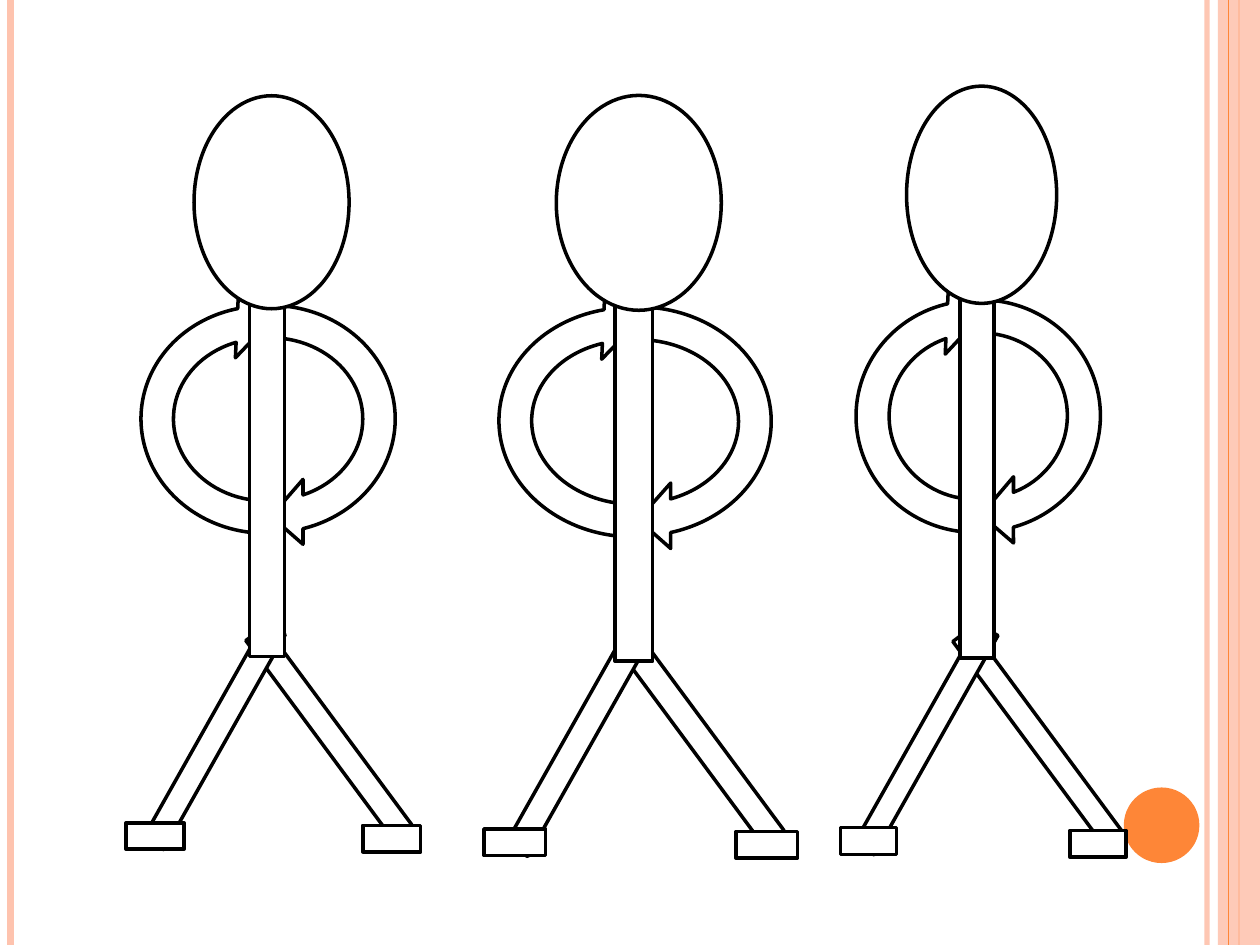
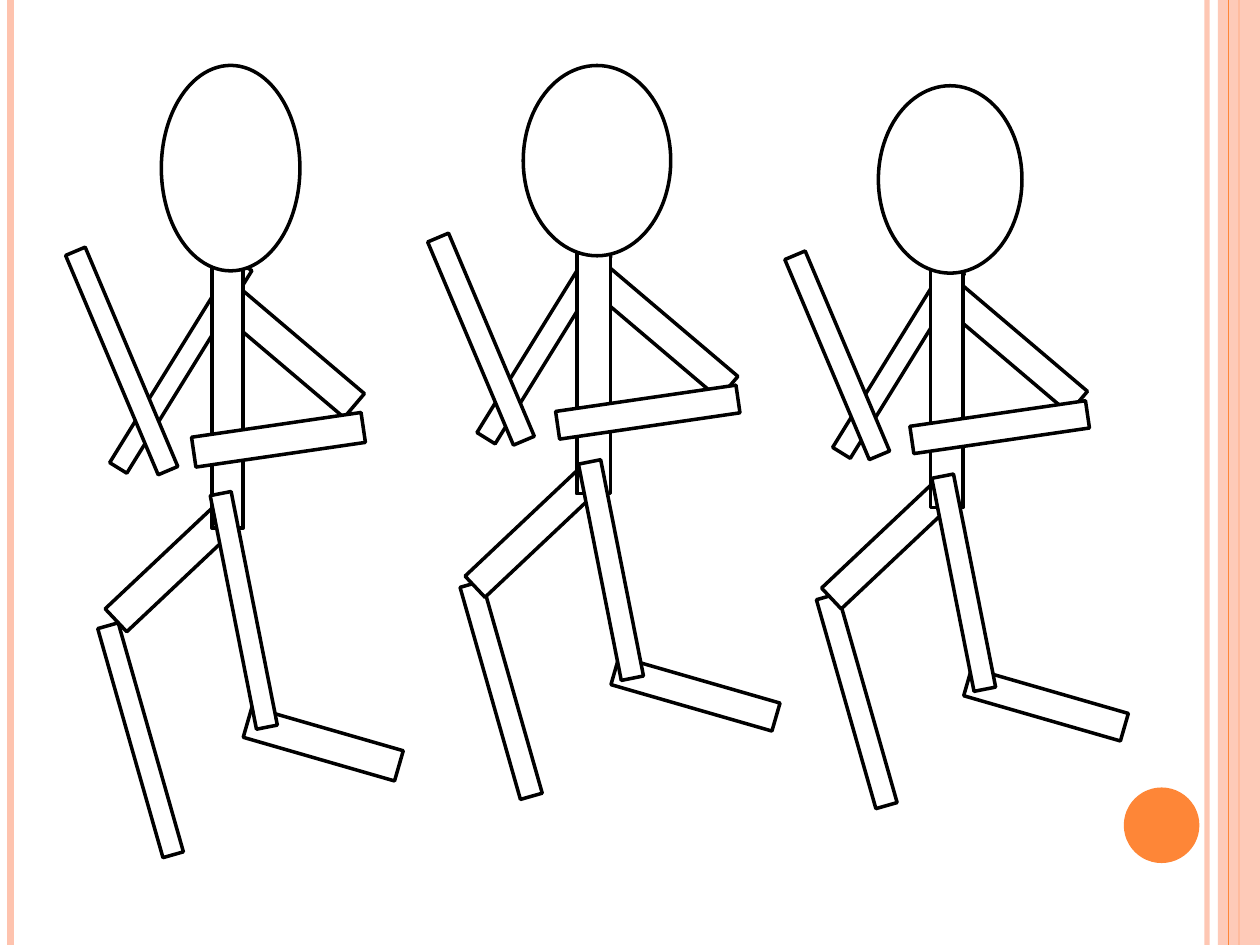
from lxml import etree
from pptx import Presentation
from pptx.dml.color import RGBColor
from pptx.enum import shapes as kinds
from pptx.oxml import ns
from pptx.util import Pt

WIDE, HIGH = 720, 540
INK, PAPER, PEACH, FLAME = "000000", "FFFFFF", "FEC3AE", "FE8637"
RECT = kinds.MSO_SHAPE.RECTANGLE
OVAL = kinds.MSO_SHAPE.OVAL
ARC = kinds.MSO_SHAPE.CIRCULAR_ARROW

# Parts of the first figure, back to front: kind, centre x, centre y, width, height, turn
STANDING = [
    (ARC, 151.2, 239.8, 148.3, 159.8, 272.7),   # arms
    (ARC, 154.8, 239.4, 148.3, 160.6, 90),
    (RECT, 187.9, 418.7, 141.1, 13.7, 53.5),    # legs
    (RECT, 122.4, 420.8, 141.1, 13.7, 119.4),
    (RECT, 152.6, 272.2, 20.2, 205.9, 0),       # trunk
    (OVAL, 155.2, 115.6, 88.6, 121.7, 0),       # head
    (RECT, 88.6, 477.7, 33.1, 15.1, 0),         # feet
    (RECT, 223.9, 479.2, 33.1, 15.1, 0),
]
RUNNING = [
    (RECT, 168.1, 202.7, 90, 18, 40.3),         # upper arms
    (RECT, 103.3, 209.5, 136.1, 11.5, 121.7),
    (RECT, 80.3, 423, 136.1, 12.2, 74.1),       # front shin and thigh
    (RECT, 99, 323.6, 90, 18, 136.7),
    (RECT, 130, 225, 18, 153.4, 0),             # trunk
    (OVAL, 131.8, 96.1, 79.2, 117.4, 0),        # head
    (RECT, 184.7, 425.2, 90, 18, 16.1),         # back shin and thigh
    (RECT, 139.3, 348.8, 136.1, 12.2, 78.8),
    (RECT, 69.5, 206.3, 136.1, 12.2, 67.1),     # forearms
    (RECT, 159.1, 251.3, 97.9, 17.3, 171.7),
]

# Each figure in a row: x scale, y scale, x shift, y shift
STAND_ROW = [(1, 1, 0, 0), (1.064, 1.009, 199.9, -0.7), (0.968, 1.02, 410.7, -6.6)]
RUN_ROW = [(1, 1, 0, 0), (1.064, 0.926, 200.9, 2.8), (1.036, 0.912, 406.4, 14.9)]


def tint(code):
    return RGBColor.from_string(code)


def fade(part, percent):
    """Make the solid colour inside part partly transparent."""
    color = part.find(".//" + ns.qn("a:srgbClr"))
    etree.SubElement(color, ns.qn("a:alpha")).set("val", str(percent * 1000))


class Deck:
    def __init__(self):
        self.file = Presentation()
        self.file.slide_width, self.file.slide_height = Pt(WIDE), Pt(HIGH)
        self.slide = None

    def page(self):
        self.slide = self.file.slides.add_slide(self.file.slide_layouts[6])
        self.frame()

    def rule(self, x, color, width, alpha=100):
        line = self.slide.shapes.add_connector(
            kinds.MSO_CONNECTOR.STRAIGHT, Pt(x), 0, Pt(x), Pt(HIGH))
        line.line.color.rgb = tint(color)
        line.line.width = Pt(width)
        props = line._element.spPr
        etree.SubElement(props, ns.qn("a:effectLst"))
        if alpha < 100:
            fade(props, alpha)

    def shape(self, home, kind, left, top, wide, high, fill, edge=None):
        item = home.add_shape(kind, Pt(left), Pt(top), Pt(wide), Pt(high))
        item.shadow.inherit = False
        item.fill.solid()
        item.fill.fore_color.rgb = tint(fill)
        if edge:
            item.line.color.rgb = tint(edge)
            item.line.width = Pt(2)
        else:
            item.line.fill.background()
        return item

    def frame(self):
        """Side rules, right band and dot."""
        home = self.slide.shapes
        self.rule(689.8, PEACH, 3, 93)
        self.rule(6, PEACH, 4.5)
        self.rule(708, FLAME, 1.5)
        band = self.shape(home, RECT, 696, 0, 24, HIGH, PEACH)
        fade(band._element.spPr, 87)
        self.rule(702, FLAME, 0.75)
        self.shape(home, OVAL, 642.2, 450, 43.2, 43.2, FLAME)

    def figure(self, parts, place):
        scale_x, scale_y, move_x, move_y = place
        home = self.slide.shapes.add_group_shape().shapes
        for kind, mid_x, mid_y, wide, high, turn in parts:
            # A part turned nearer to upright stretches along the other axis
            upright = 45 <= turn % 180 < 135
            wide *= scale_y if upright else scale_x
            high *= scale_x if upright else scale_y
            left = mid_x * scale_x + move_x - wide / 2
            top = mid_y * scale_y + move_y - high / 2
            item = self.shape(home, kind, left, top, wide, high, PAPER, INK)
            item.rotation = turn

    def row(self, parts, places):
        self.page()
        for place in places:
            self.figure(parts, place)


def main():
    deck = Deck()
    deck.row(STANDING, STAND_ROW)
    deck.row(RUNNING, RUN_ROW)
    deck.file.save("out.pptx")


if __name__ == "__main__":
    main()
